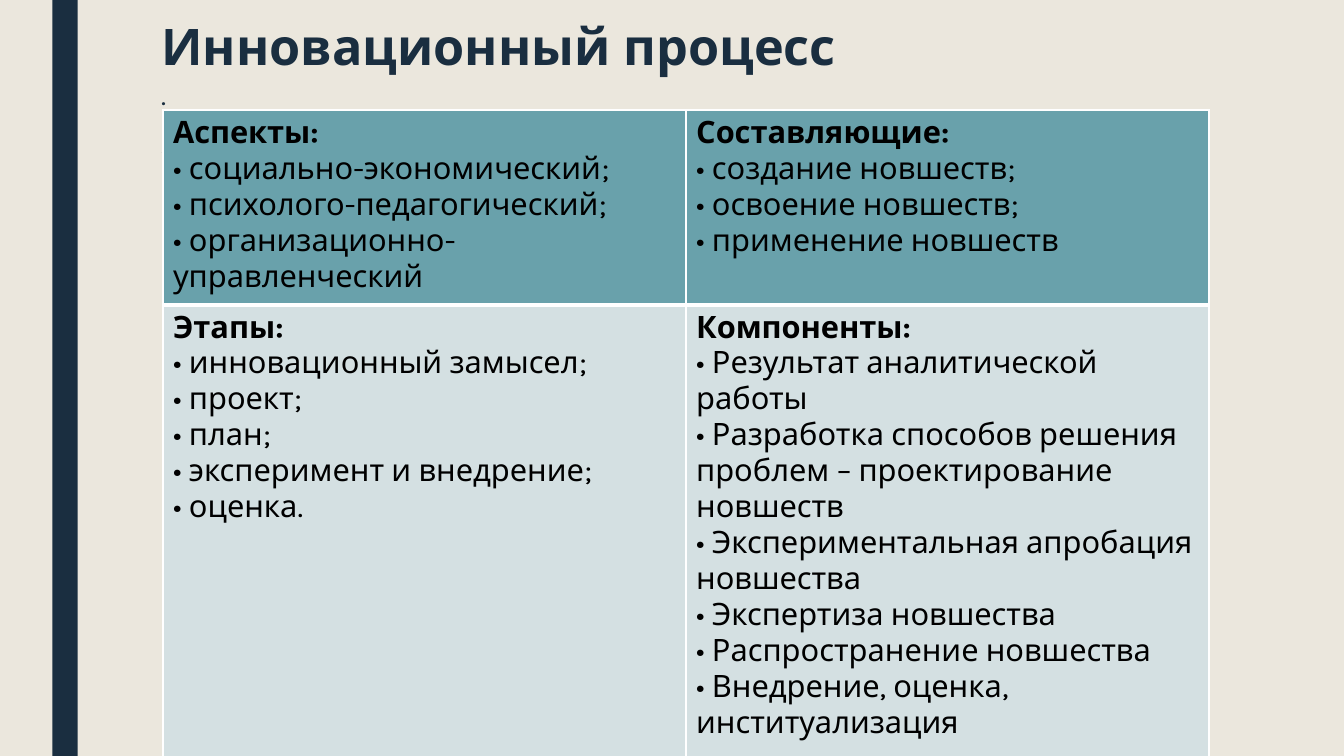
from dataclasses import dataclass

from lxml.etree import SubElement
from pptx import Presentation
from pptx.dml.color import RGBColor
from pptx.enum.shapes import MSO_SHAPE
from pptx.enum.text import MSO_ANCHOR, MSO_AUTO_SIZE, PP_ALIGN
from pptx.oxml import parse_xml
from pptx.oxml.ns import nsdecls, qn
from pptx.util import Cm, Pt


@dataclass(frozen=True)
class Theme:
    font: str = "Karla"
    background: str = "EBE7DD"
    navy: str = "1A2E40"
    black: str = "000000"
    border: str = "FFFFFF"
    row_fills: tuple = ("69A1AB", "D4E0E2")
    title_size: int = 36
    body_size: int = 20
    table_size: int = 22
    thin_border: int = 1
    thick_border: int = 3


THEME = Theme()
TITLE = "Инновационный процесс"
BODY_LINES = [".", "."]
ROW_HEIGHTS = [Cm(4.24), Cm(10.59)]
COLUMN_WIDTH = Cm(13.18)
# Each cell holds a heading and its bulleted items.
CELLS = [
    [
        ("Аспекты:", ["социально-экономический;", "психолого-педагогический;",
                      "организационно-управленческий"]),
        ("Составляющие:", ["создание новшеств;", "освоение новшеств;",
                           "применение новшеств"]),
    ],
    [
        ("Этапы:", ["инновационный замысел;", "проект;", "план;",
                    "эксперимент и внедрение;", "оценка."]),
        ("Компоненты:", ["Результат аналитической работы",
                         "Разработка способов решения проблем – проектирование новшеств",
                         "Экспериментальная апробация новшества",
                         "Экспертиза новшества",
                         "Распространение новшества",
                         "Внедрение, оценка, институализация"]),
    ],
]


def set_attributes(target, values):
    for name, value in values.items():
        setattr(target, name, value)


def set_fill(fill, color):
    fill.solid()
    fill.fore_color.rgb = RGBColor.from_string(color)


def write_paragraphs(text_frame, lines, size, color, paragraph_format):
    """Write (text, bold) lines, one paragraph each."""
    for index, (text, bold) in enumerate(lines):
        paragraph = text_frame.paragraphs[0] if index == 0 else text_frame.add_paragraph()
        set_attributes(paragraph, paragraph_format)
        run = paragraph.add_run()
        run.text = text
        set_attributes(run.font, {"name": THEME.font, "size": Pt(size), "bold": bold})
        run.font.color.rgb = RGBColor.from_string(color)


def add_side_bar(slide, height):
    bar = slide.shapes.add_shape(MSO_SHAPE.RECTANGLE, Cm(1.32), 0, Cm(0.64), height)
    bar.shadow.inherit = False
    set_fill(bar.fill, THEME.navy)
    bar.line.fill.background()


def fill_title(slide):
    title = slide.shapes.title
    set_attributes(title, {"left": Cm(3.81), "top": Cm(0.43),
                           "width": Cm(26.67), "height": Cm(4.11)})
    set_attributes(title.text_frame, {"vertical_anchor": MSO_ANCHOR.TOP, "word_wrap": True,
                                      "auto_size": MSO_AUTO_SIZE.NONE})
    write_paragraphs(title.text_frame, [(TITLE, True)], THEME.title_size, THEME.navy,
                     {"alignment": PP_ALIGN.LEFT, "line_spacing": 0.89})


def add_body(slide):
    body = slide.shapes.add_textbox(Cm(3.81), Cm(1.91), Cm(26.67), Cm(16.66))
    body.text_frame.word_wrap = True
    write_paragraphs(body.text_frame, [(line, False) for line in BODY_LINES],
                     THEME.body_size, THEME.navy,
                     {"line_spacing": 0.94, "space_before": Pt(10), "space_after": Pt(2)})


def set_borders(cell, widths):
    """Draw cell borders from a dict of side letter to width in points."""
    properties = cell._tc.get_or_add_tcPr()
    for index, side in enumerate("LRTB"):
        line = parse_xml(f'<a:ln{side} {nsdecls("a")} w="{Pt(widths[side])}"/>')
        fill = SubElement(line, qn("a:solidFill"))
        SubElement(fill, qn("a:srgbClr"), val=THEME.border)
        properties.insert(index, line)


def add_process_table(slide):
    table = slide.shapes.add_table(len(CELLS), len(CELLS[0]), Cm(4.11), Cm(2.77),
                                   COLUMN_WIDTH * len(CELLS[0]), sum(ROW_HEIGHTS)).table
    set_attributes(table, {"first_row": False, "horz_banding": False})
    for column in table.columns:
        column.width = COLUMN_WIDTH
    thin, thick = THEME.thin_border, THEME.thick_border
    for row_index, row in enumerate(CELLS):
        table.rows[row_index].height = ROW_HEIGHTS[row_index]
        for column_index, (heading, items) in enumerate(row):
            cell = table.cell(row_index, column_index)
            set_fill(cell.fill, THEME.row_fills[row_index])
            set_borders(cell, {"L": thin, "R": thin,
                               "T": thick if row_index == 1 else thin,
                               "B": thick if row_index == 0 else thin})
            lines = [(heading, True)] + [(f"• {item}", False) for item in items]
            write_paragraphs(cell.text_frame, lines, THEME.table_size, THEME.black, {})


def main():
    presentation = Presentation()
    set_attributes(presentation, {"slide_width": Cm(33.87), "slide_height": Cm(19.05)})
    slide = presentation.slides.add_slide(presentation.slide_layouts[5])
    set_fill(slide.background.fill, THEME.background)
    add_side_bar(slide, presentation.slide_height)
    fill_title(slide)
    add_body(slide)
    add_process_table(slide)
    presentation.save("out.pptx")


if __name__ == "__main__":
    main()
